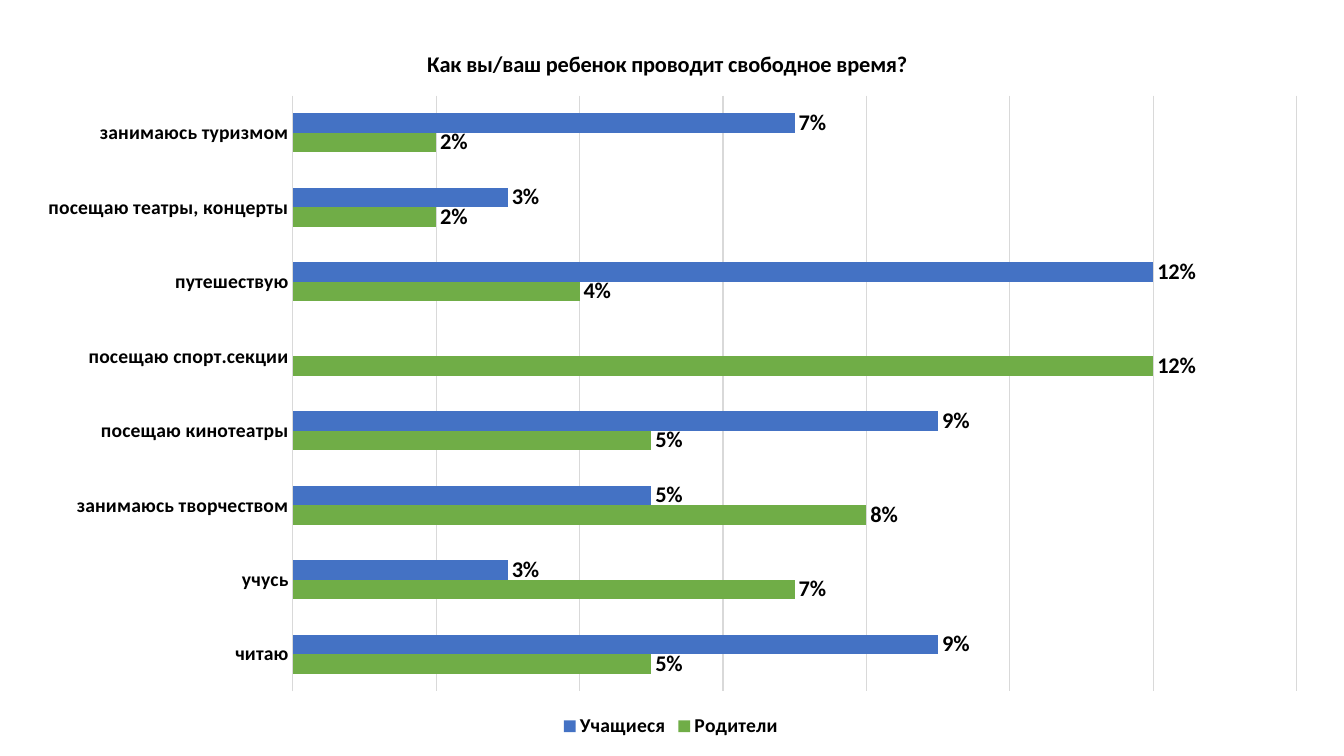
import dataclasses

import pptx
import pptx.chart.data
import pptx.dml.color
import pptx.enum.chart
import pptx.oxml
import pptx.oxml.ns
import pptx.util

PX = 9525
ENUM = pptx.enum.chart


@dataclasses.dataclass(frozen=True)
class Theme:
    face: str = "Calibri"
    ink: str = "000000"
    rule: str = "D9D9D9"
    kids: str = "4472C4"
    folks: str = "70AD47"
    body: int = 14
    large: int = 16
    hair: float = 0.75


THEME = Theme()
TITLE = "Как вы/ваш ребенок проводит свободное время?"
ROWS = [
    ("читаю", 0.05, 0.09),
    ("учусь", 0.07, 0.03),
    ("занимаюсь творчеством", 0.08, 0.05),
    ("посещаю кинотеатры", 0.05, 0.09),
    ("посещаю спорт.секции", 0.12, None),
    ("путешествую", 0.04, 0.12),
    ("посещаю театры, концерты", 0.02, 0.03),
    ("занимаюсь туризмом", 0.02, 0.07),
]


def color(code):
    return pptx.dml.color.RGBColor.from_string(code)


def style(font, size):
    font.name = THEME.face
    font.size = pptx.util.Pt(size)
    font.bold = True
    font.color.rgb = color(THEME.ink)


def rule(line):
    line.color.rgb = color(THEME.rule)
    line.width = pptx.util.Pt(THEME.hair)


def place(node, index, **parts):
    for old in node.findall(pptx.oxml.ns.qn("c:layout")):
        node.remove(old)
    body = "".join(f'<c:{key} val="{val}"/>' for key, val in parts.items())
    node.insert(index, pptx.oxml.parse_xml(
        f'<c:layout {pptx.oxml.ns.nsdecls("c")}>'
        f"<c:manualLayout>{body}</c:manualLayout></c:layout>"))


def add_title(chart):
    chart.has_title = True
    title = chart.chart_title
    title.include_in_layout = False
    para = title.text_frame.paragraphs[0]
    para.text = TITLE
    style(para.font, THEME.large)
    place(title._element, 1, xMode="edge", yMode="edge", x=0.31, y=0.04)


def format_axes(chart):
    names = chart.category_axis
    names.major_tick_mark = ENUM.XL_TICK_MARK.NONE
    names.minor_tick_mark = ENUM.XL_TICK_MARK.NONE
    style(names.tick_labels.font, THEME.body)
    rule(names.format.line)
    share = chart.value_axis
    share.visible = False
    share.minimum_scale = 0
    share.maximum_scale = 0.14
    share.major_unit = 0.02
    share.has_major_gridlines = True
    rule(share.major_gridlines.format.line)
    share.tick_labels.number_format = "0%"
    share.tick_labels.number_format_is_linked = False


def format_bars(chart):
    plot = chart.plots[0]
    plot.gap_width = 182
    plot.vary_by_categories = False
    for series, code in zip(plot.series, (THEME.folks, THEME.kids)):
        series.format.fill.solid()
        series.format.fill.fore_color.rgb = color(code)
        labels = series.data_labels
        labels.show_value = True
        labels.position = ENUM.XL_LABEL_POSITION.OUTSIDE_END
        labels.number_format = "0%"
        labels.number_format_is_linked = False
        style(labels.font, THEME.large)


def add_chart(slide, left, top, width, height):
    names, folks, kids = zip(*ROWS)
    data = pptx.chart.data.CategoryChartData(number_format="0%")
    data.categories = names
    data.add_series("Родители", folks)
    data.add_series("Учащиеся", kids)
    box = [n * PX for n in (left, top, width, height)]
    chart = slide.shapes.add_chart(
        ENUM.XL_CHART_TYPE.BAR_CLUSTERED, *box, data).chart
    style(chart.font, THEME.body)
    add_title(chart)
    format_axes(chart)
    format_bars(chart)
    chart.has_legend = True
    chart.legend.position = ENUM.XL_LEGEND_POSITION.BOTTOM
    chart.legend.include_in_layout = False
    style(chart.legend.font, THEME.body)
    place(chart._chartSpace.chart.plotArea, 0, layoutTarget="inner",
          xMode="edge", yMode="edge", x=0.21, y=0.11, w=0.77, h=0.82)


def main():
    deck = pptx.Presentation()
    deck.slide_width = 1280 * PX
    deck.slide_height = 720 * PX
    slide = deck.slides.add_slide(deck.slide_layouts.get_by_name("Blank"))
    add_chart(slide, 18, 15, 1242, 692)
    deck.save("out.pptx")


if __name__ == "__main__":
    main()
